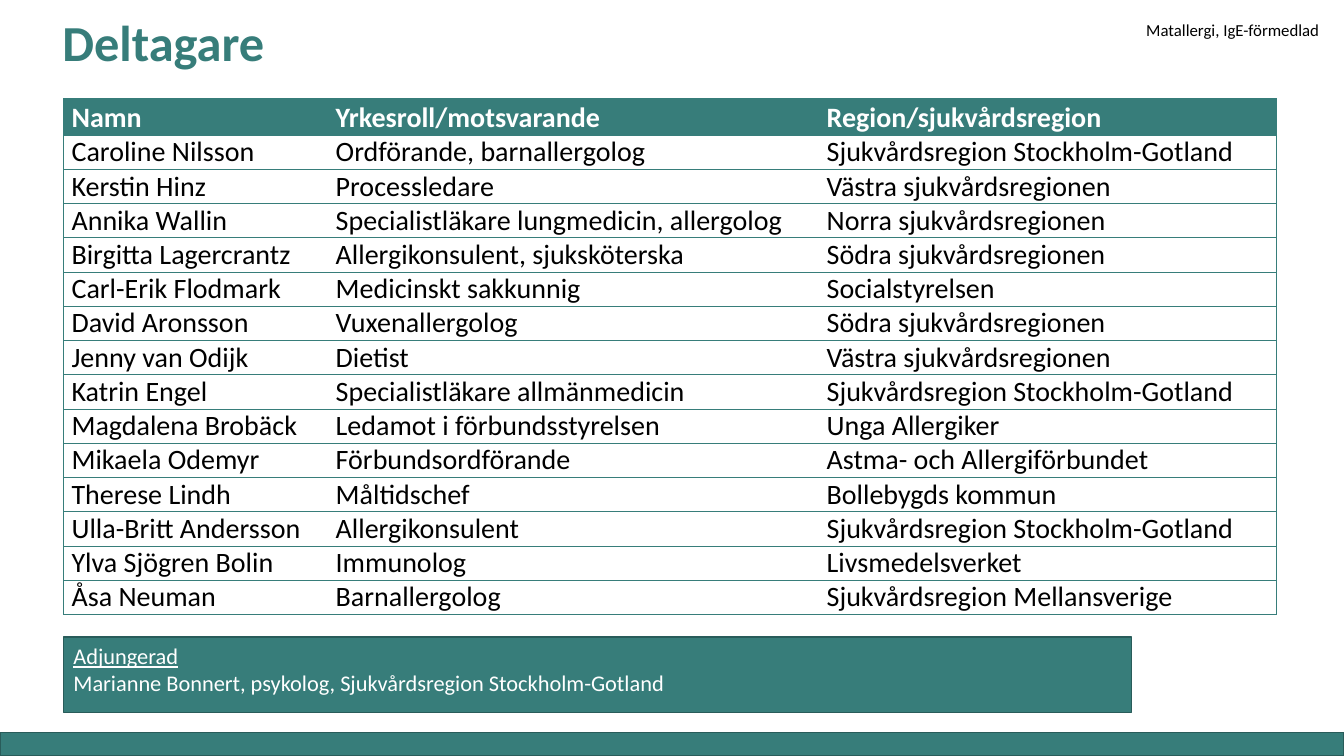
"""Build the participant list slide for the food allergy programme."""
from dataclasses import dataclass
from typing import Any, NamedTuple

from lxml import etree
from pptx import Presentation
from pptx import util as u
from pptx.dml.color import RGBColor
from pptx.enum import shapes, text
from pptx.oxml import ns


@dataclass(frozen=True)
class Theme:
    font: str = "Calibri"
    teal: str = "377D7A"
    dark_teal: str = "295C5A"
    white: str = "FFFFFF"
    black: str = "000000"
    title: float = 36
    table: float = 20
    guest: float = 16
    topic: float = 12
    border: float = 0.5


class Area(NamedTuple):
    left: float
    top: float
    width: float
    height: float

    def lengths(self) -> tuple:
        return tuple(u.Inches(value) for value in self)


class Participant(NamedTuple):
    name: str
    role: str
    region: str


class Label(NamedTuple):
    area: Area
    lines: list[str]
    style: dict[str, Any]


THEME = Theme()
STOCKHOLM = "Sjukvårdsregion Stockholm-Gotland"
WEST = "Västra sjukvårdsregionen"
SOUTH = "Södra sjukvårdsregionen"

HEADING = Participant("Namn", "Yrkesroll/motsvarande", "Region/sjukvårdsregion")
PARTICIPANTS = [
    Participant("Caroline Nilsson", "Ordförande, barnallergolog", STOCKHOLM),
    Participant("Kerstin Hinz", "Processledare", WEST),
    Participant("Annika Wallin", "Specialistläkare lungmedicin, allergolog", "Norra sjukvårdsregionen"),
    Participant("Birgitta Lagercrantz", "Allergikonsulent, sjuksköterska", SOUTH),
    Participant("Carl-Erik Flodmark", "Medicinskt sakkunnig", "Socialstyrelsen"),
    Participant("David Aronsson", "Vuxenallergolog", SOUTH),
    Participant("Jenny van Odijk", "Dietist", WEST),
    Participant("Katrin Engel", "Specialistläkare allmänmedicin", STOCKHOLM),
    Participant("Magdalena Brobäck", "Ledamot i förbundsstyrelsen", "Unga Allergiker"),
    Participant("Mikaela Odemyr", "Förbundsordförande", "Astma- och Allergiförbundet"),
    Participant("Therese Lindh", "Måltidschef", "Bollebygds kommun"),
    Participant("Ulla-Britt Andersson", "Allergikonsulent", STOCKHOLM),
    Participant("Ylva Sjögren Bolin", "Immunolog", "Livsmedelsverket"),
    Participant("Åsa Neuman", "Barnallergolog", "Sjukvårdsregion Mellansverige"),
]
COLUMN_WIDTHS = [2.62, 4.87, 4.54]
HEADING_HEIGHT, ROW_HEIGHT = 0.36, 0.34

LABELS = [
    Label(Area(0.52, 0.04, 11.5, 0.82), ["Deltagare"],
          dict(size=THEME.title, bold=True, color=THEME.teal, spacing=0.9,
               anchor=text.MSO_ANCHOR.MIDDLE)),
    Label(Area(11.27, 0.15, 1.92, 0.3), ["Matallergi, IgE-förmedlad"],
          dict(size=THEME.topic)),
]


def write(frame: Any, lines: list[str], *, size: float, color: str = THEME.black,
          bold: bool = False, spacing: float | None = None, underlined: int = 0,
          anchor: Any = text.MSO_ANCHOR.TOP) -> None:
    frame.word_wrap = True
    frame.vertical_anchor = anchor
    for index, line in enumerate(lines):
        para = frame.add_paragraph() if index else frame.paragraphs[0]
        para.alignment = text.PP_ALIGN.LEFT
        if spacing is not None:
            para.line_spacing = spacing
        span = para.add_run()
        span.text = line
        span.font.name = THEME.font
        span.font.size = u.Pt(size)
        span.font.bold = bold
        span.font.underline = index < underlined
        span.font.color.rgb = RGBColor.from_string(color)


def add_bar(page: Any, area: Area) -> Any:
    bar = page.shapes.add_shape(shapes.MSO_SHAPE.RECTANGLE, *area.lengths())
    bar.shadow.inherit = False
    bar.fill.solid()
    bar.fill.fore_color.rgb = RGBColor.from_string(THEME.teal)
    bar.line.color.rgb = RGBColor.from_string(THEME.dark_teal)
    bar.line.width = u.Pt(1)
    return bar


def add_label(page: Any, label: Label) -> None:
    box = page.shapes.add_textbox(*label.area.lengths())
    write(box.text_frame, label.lines, **label.style)


def set_borders(cell: Any, visible: dict[str, bool]) -> None:
    properties = cell._tc.get_or_add_tcPr()
    for side, shown in visible.items():
        line = etree.SubElement(properties, ns.qn(f"a:ln{side}"), w=str(u.Pt(THEME.border)))
        fill = etree.SubElement(line, ns.qn("a:solidFill" if shown else "a:noFill"))
        if shown:
            etree.SubElement(fill, ns.qn("a:srgbClr"), val=THEME.teal)


def add_participants(page: Any, left: float, top: float) -> None:
    rows = [HEADING, *PARTICIPANTS]
    height = HEADING_HEIGHT + ROW_HEIGHT * len(PARTICIPANTS)
    area = Area(left, top, sum(COLUMN_WIDTHS), height)
    table = page.shapes.add_table(len(rows), len(COLUMN_WIDTHS), *area.lengths()).table
    table.horz_banding = False
    for column, width in zip(table.columns, COLUMN_WIDTHS):
        column.width = u.Inches(width)
    last = len(COLUMN_WIDTHS) - 1
    for row, participant in enumerate(rows):
        heading = row == 0
        table.rows[row].height = u.Inches(HEADING_HEIGHT if heading else ROW_HEIGHT)
        for column, words in enumerate(participant):
            cell = table.cell(row, column)
            cell.margin_left = cell.margin_right = u.Inches(0.08)
            cell.margin_top = cell.margin_bottom = 0
            set_borders(cell, {"L": column == 0, "R": column == last, "T": True, "B": True})
            if heading:
                cell.fill.solid()
                cell.fill.fore_color.rgb = RGBColor.from_string(THEME.teal)
            else:
                cell.fill.background()
            write(cell.text_frame, [words], size=THEME.table, bold=heading,
                  color=THEME.white if heading else THEME.black,
                  spacing=1.06 if heading else None)


def main() -> None:
    deck = Presentation()
    deck.slide_width, deck.slide_height = u.Inches(13.33), u.Inches(7.5)
    page = deck.slides.add_slide(deck.slide_layouts[6])
    add_bar(page, Area(0, 7.27, 13.33, 0.23))
    for label in LABELS:
        add_label(page, label)
    add_participants(page, 0.63, 0.98)
    guests = add_bar(page, Area(0.63, 6.32, 10.59, 0.75))
    write(guests.text_frame,
          ["Adjungerad", "Marianne Bonnert, psykolog, Sjukvårdsregion Stockholm-Gotland"],
          size=THEME.guest, color=THEME.white, underlined=1)
    deck.save("out.pptx")


if __name__ == "__main__":
    main()
